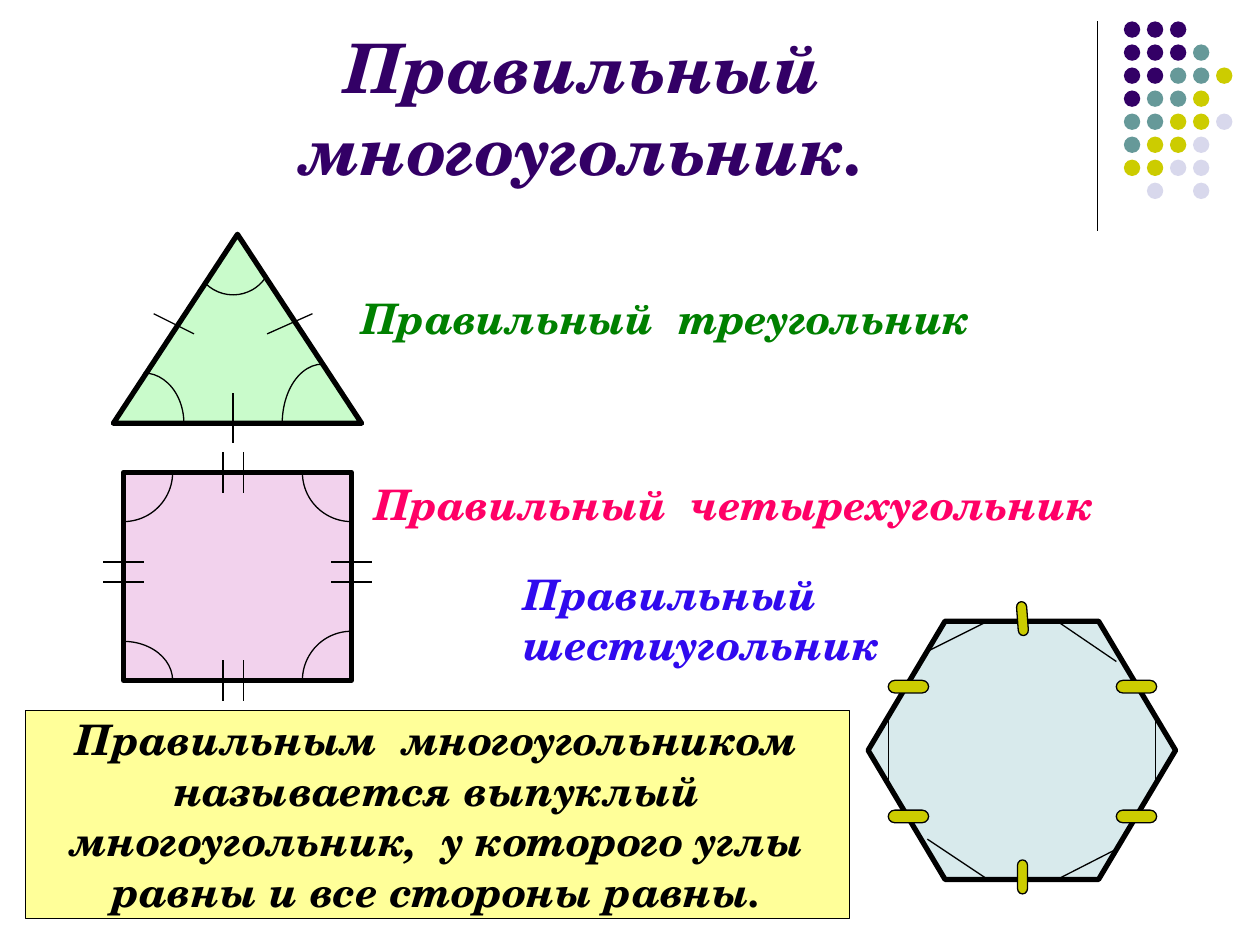
import pptx
import pptx.util
import pptx.dml.color
import pptx.enum.shapes
import pptx.enum.text
import pptx.oxml
import pptx.oxml.ns

Inches = pptx.util.Inches
Pt = pptx.util.Pt
RGBColor = pptx.dml.color.RGBColor
MSO_SHAPE = pptx.enum.shapes.MSO_SHAPE
MSO_CONNECTOR = pptx.enum.shapes.MSO_CONNECTOR
MSO_ANCHOR = pptx.enum.text.MSO_ANCHOR
MSO_AUTO_SIZE = pptx.enum.text.MSO_AUTO_SIZE
PP_ALIGN = pptx.enum.text.PP_ALIGN

FONT = "TeX Gyre Schola"
BLACK = RGBColor(0x00, 0x00, 0x00)
PURPLE = RGBColor(0x33, 0x00, 0x66)
TEAL = RGBColor(0x66, 0x99, 0x99)
OLIVE = RGBColor(0xCC, 0xCC, 0x00)
LAVENDER = RGBColor(0xD8, 0xD8, 0xEC)
GREEN = RGBColor(0x00, 0x80, 0x00)
PINK = RGBColor(0xFF, 0x00, 0x66)
BLUE = RGBColor(0x30, 0x0A, 0xEE)
LIGHT_GREEN = RGBColor(0xC9, 0xFB, 0xCB)
LIGHT_PINK = RGBColor(0xF2, 0xD2, 0xED)
LIGHT_BLUE = RGBColor(0xD8, 0xEA, 0xEC)
YELLOW = RGBColor(0xFF, 0xFF, 0x99)

DOT_COLORS = {"P": PURPLE, "T": TEAL, "O": OLIVE, "L": LAVENDER}
DOT_ROWS = ["PPP", "PPPT", "PPTTO", "PTTO", "TTOOL", "TOOL", "OOLL", " L L"]


def add_figure(shapes, kind, x, y, w, h, fill=None, line_width=None):
    sp = shapes.add_shape(kind, Inches(x), Inches(y), Inches(w), Inches(h))
    sp.shadow.inherit = False
    if fill is None:
        sp.fill.background()
    else:
        sp.fill.solid()
        sp.fill.fore_color.rgb = fill
    if line_width is None:
        sp.line.fill.background()
    else:
        sp.line.color.rgb = BLACK
        sp.line.width = Pt(line_width)
    return sp


def add_line(s, x1, y1, x2, y2):
    line = s.shapes.add_connector(
        MSO_CONNECTOR.STRAIGHT, Inches(x1), Inches(y1), Inches(x2), Inches(y2))
    line.line.color.rgb = BLACK
    line.line.width = Pt(0.75)
    sp_pr = line._element.spPr
    sp_pr.append(pptx.oxml.parse_xml(
        "<a:effectLst %s/>" % pptx.oxml.ns.nsdecls("a")))


def add_tick(s, cx, cy, dx, dy):
    add_line(s, cx - dx, cy - dy, cx + dx, cy + dy)


def add_angle_arc(s, cx, cy, rx, ry, start, end):
    sp = add_figure(s.shapes, MSO_SHAPE.ARC, cx - rx, cy - ry, 2 * rx, 2 * ry,
                    line_width=0.75)
    sp.adjustments[0] = start * 0.6
    sp.adjustments[1] = end * 0.6


def write_lines(tf, lines, size, color, align):
    for i, text in enumerate(lines):
        p = tf.add_paragraph() if i else tf.paragraphs[0]
        p.alignment = align
        r = p.add_run()
        r.text = text
        r.font.name = FONT
        r.font.size = Pt(size)
        r.font.bold = True
        r.font.italic = True
        r.font.color.rgb = color


def add_title(s, x, y, w, h):
    sp = s.shapes.add_textbox(Inches(x), Inches(y), Inches(w), Inches(h))
    tf = sp.text_frame
    tf.word_wrap = True
    tf.vertical_anchor = MSO_ANCHOR.BOTTOM
    write_lines(tf, ["Правильный многоугольник."], 39, PURPLE, PP_ALIGN.CENTER)


def add_label(s, x, y, w, h, lines, color):
    sp = s.shapes.add_textbox(Inches(x), Inches(y), Inches(w), Inches(h))
    tf = sp.text_frame
    tf.word_wrap = False
    tf.auto_size = MSO_AUTO_SIZE.SHAPE_TO_FIT_TEXT
    write_lines(tf, lines, 24, color, PP_ALIGN.LEFT)


def add_dots(s, x, y, w, h):
    add_line(s, x, y, x, y + h)
    group = s.shapes.add_group_shape()
    pitch = 1.28 / 7
    for row, codes in enumerate(DOT_ROWS):
        for col, code in enumerate(codes):
            if code in DOT_COLORS:
                add_figure(group.shapes, MSO_SHAPE.OVAL,
                           x + w - 0.86 + col * pitch, y + row * pitch,
                           0.13, 0.13, DOT_COLORS[code])


def add_triangle(s, x, y, w, h):
    add_figure(s.shapes, MSO_SHAPE.ISOSCELES_TRIANGLE, x, y, w, h, LIGHT_GREEN, 3)
    add_angle_arc(s, x + 0.24, y + h, 0.32, 0.4, 270, 0)
    add_angle_arc(s, x + 0.95, y + 0.17, 0.31, 0.31, 37, 135)
    add_angle_arc(s, x + 1.66, y + h, 0.32, 0.47, 180, 270)
    add_tick(s, x + 0.95, y + h - 0.04, 0, 0.2)
    add_tick(s, x + 1.4, y + 0.71, 0.18, -0.08)
    add_tick(s, x + 0.48, y + 0.71, 0.16, 0.08)


def add_square(s, x, y, w, h):
    add_figure(s.shapes, MSO_SHAPE.RECTANGLE, x, y, w, h, LIGHT_PINK, 3)
    corners = [(x, y, 0.39), (x + w, y, 0.39), (x + w, y + h, 0.39), (x, y + h, 0.31)]
    for i, (cx, cy, ry) in enumerate(corners):
        add_angle_arc(s, cx, cy, 0.39, ry, 90 * i, 90 * (i + 1) % 360)
    for offset in (-0.08, 0.08):
        for edge in (y, y + h):
            add_tick(s, x + 0.87 + offset, edge, 0, 0.16)
        for edge in (x, x + w):
            add_tick(s, edge, y + 0.79 + offset, 0.16, 0)


def add_hexagon(s, x, y, w, h):
    sp = add_figure(s.shapes, MSO_SHAPE.HEXAGON, x, y, w, h, LIGHT_BLUE, 3)
    sp.adjustments[0] = 0.298
    chords = [
        (0.95, 0, 0.47, 0.24), (0.16, 0.79, 0.16, 1.26), (0.47, 1.73, 0.95, h),
        (1.5, h, 1.97, 1.81), (1.5, 0, 1.97, 0.32), (2.28, 0.79, 2.28, 1.26),
    ]
    for x1, y1, x2, y2 in chords:
        add_line(s, x + x1, y + y1, x + x2, y + y2)
    side_marks = [(mx, my, 0.32, 0.1, 0) for mx in (0.16, 1.97) for my in (0.47, 1.5)]
    end_marks = [(1.09, -0.06, 0.27, 0.08, 85.8), (1.09, 1.99, 0.27, 0.08, 90)]
    for mx, my, mw, mh, angle in side_marks + end_marks:
        mark = add_figure(s.shapes, MSO_SHAPE.FLOWCHART_TERMINATOR,
                          x + mx, y + my, mw, mh, OLIVE, 0.75)
        mark.rotation = angle


def add_definition(s, x, y, w, h):
    sp = add_figure(s.shapes, MSO_SHAPE.RECTANGLE, x, y, w, h, YELLOW, 0.75)
    tf = sp.text_frame
    tf.word_wrap = False
    tf.vertical_anchor = MSO_ANCHOR.MIDDLE
    lines = ["Правильным  многоугольником", "называется выпуклый",
             "многоугольник,  у которого углы", "равны и все стороны равны."]
    write_lines(tf, lines, 24, BLACK, PP_ALIGN.CENTER)


def main():
    prs = pptx.Presentation()
    prs.slide_width = Inches(10)
    prs.slide_height = Inches(7.5)
    s = prs.slides.add_slide(prs.slide_layouts[6])
    add_dots(s, 8.71, 0.17, 1.07, 1.66)
    add_title(s, 0.5, 0.13, 8.25, 1.42)
    add_triangle(s, 0.9, 1.86, 1.97, 1.5)
    add_label(s, 2.77, 2.27, 5.17, 0.5, ["Правильный  треугольник"], GREEN)
    add_square(s, 0.98, 3.75, 1.81, 1.65)
    add_label(s, 2.87, 3.75, 6.08, 0.5, ["Правильный  четырехугольник"], PINK)
    add_hexagon(s, 6.89, 4.93, 2.44, 2.05)
    add_label(s, 4.06, 4.46, 3.16, 0.9, ["Правильный", "шестиугольник"], BLUE)
    add_definition(s, 0.2, 5.64, 6.54, 1.65)
    prs.save("out.pptx")


if __name__ == "__main__":
    main()
